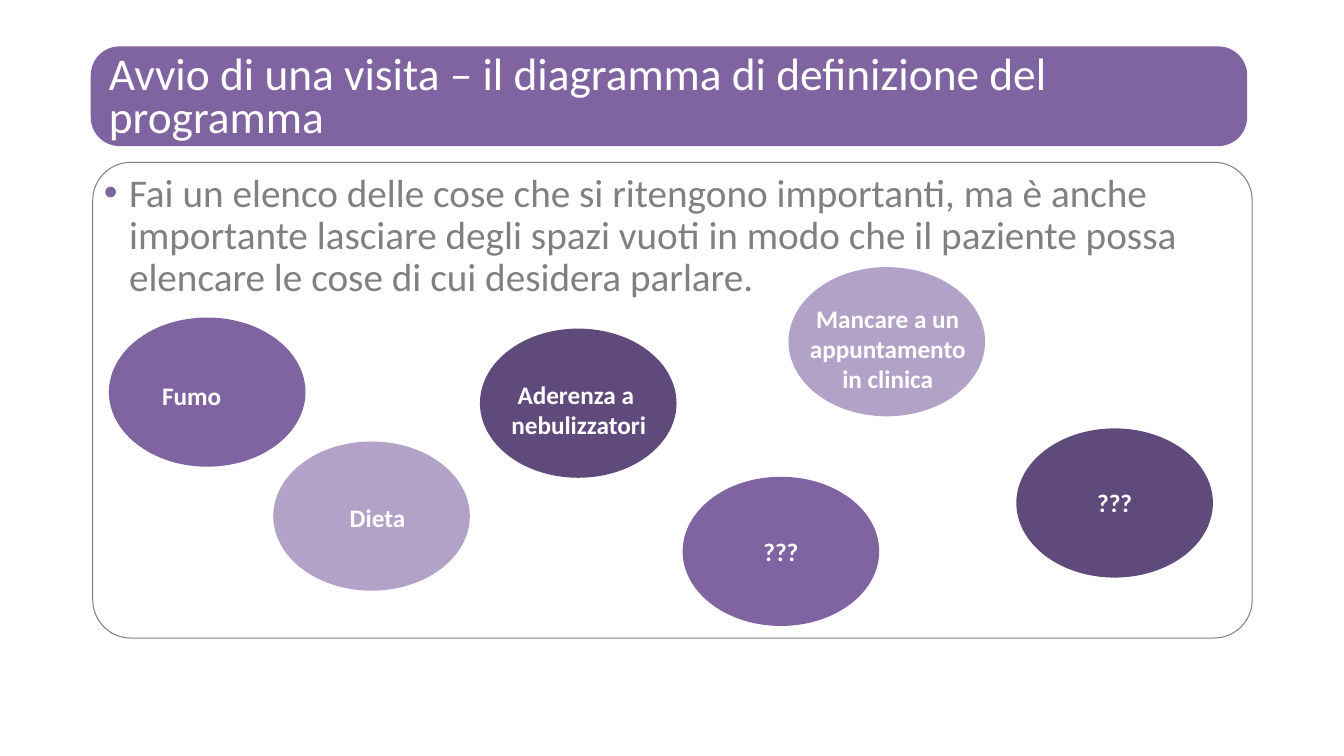
from pptx import Presentation
from pptx.util import Inches, Pt
from pptx.dml.color import RGBColor as RGB
from pptx.enum.shapes import MSO_SHAPE as Shape
from pptx.enum.text import MSO_ANCHOR as Anchor, PP_ALIGN as Align
from lxml.etree import SubElement as Sub
from pptx.oxml.ns import qn

COLORS = {"violet": "8064A2", "lilac": "B3A2C7", "plum": "604A7B",
          "gray": "808080", "white": "FFFFFF"}
TITLE = "Avvio di una visita – il diagramma di definizione del programma"
BODY = ("Fai un elenco delle cose che si ritengono importanti, ma è anche "
        "importante lasciare degli spazi vuoti in modo che il paziente possa "
        "elencare le cose di cui desidera parlare.")
OVAL = (1.95, 1.48)
TOPICS = [
    (["Dieta"], "lilac", (2.71, 4.38), (3.37, 4.93, 0.75, 0.4), Align.LEFT, False),
    (["Fumo"], "violet", (1.08, 3.15), (1.51, 3.72, 0.79, 0.4), Align.LEFT, False),
    (["Aderenza a ", "nebulizzatori"], "plum", (4.76, 3.26),
     (4.97, 3.71, 1.54, 0.7), Align.CENTER, False),
    (["Mancare a un appuntamento", "in clinica"], "lilac", (7.82, 2.65),
     (7.26, 2.96, 3.09, 1.01), Align.CENTER, True),
    (["???"], "violet", (6.77, 4.73), (7.47, 5.27, 0.55, 0.4), Align.CENTER, False),
    (["???"], "plum", (10.08, 4.25), (10.78, 4.79, 0.55, 0.4), Align.CENTER, False),
]


def color(name):
    return RGB.from_string(COLORS[name])


def add_form(kind, box, fill=None, line=None, adj=None):
    form = slide.shapes.add_shape(kind, *map(Inches, box))
    form.shadow.inherit = False
    if fill:
        form.fill.solid()
        form.fill.fore_color.rgb = color(fill)
    else:
        form.fill.background()
    if line:
        form.line.color.rgb = color(line)
        form.line.width = Pt(0.75)
    else:
        form.line.fill.background()
    if adj:
        form.adjustments[0] = adj
    return form


def add_text(frame, lines, size=18, ink="white", bold=False, align=Align.LEFT,
             anchor=Anchor.TOP, wrap=True, space=None, inset=None, bullet=None):
    frame.word_wrap = wrap
    frame.vertical_anchor = anchor
    if inset is not None:
        frame.margin_left = frame.margin_right = Inches(inset)
        frame.margin_top = frame.margin_bottom = Inches(inset)
    for i, line in enumerate(lines):
        para = frame.add_paragraph() if i else frame.paragraphs[0]
        para.alignment = align
        if space:
            para.line_spacing = space
        if bullet:
            props = para._p.get_or_add_pPr()
            props.set("marL", str(Inches(0.25)))
            props.set("indent", str(-Inches(0.25)))
            Sub(Sub(props, qn("a:buClr")), qn("a:srgbClr")).set("val", COLORS[bullet])
            Sub(props, qn("a:buFont")).set("typeface", "Arial")
            Sub(props, qn("a:buChar")).set("char", "•")
        run = para.add_run()
        run.text = line
        font = run.font
        font.name, font.size, font.bold = "Calibri", Pt(size), bold
        font.color.rgb = color(ink)


deck = Presentation()
deck.slide_width, deck.slide_height = Inches(13.33), Inches(7.5)
slide = deck.slides.add_slide(deck.slide_layouts[6])

add_form(Shape.ROUNDED_RECTANGLE, (0.9, 0.46, 11.47, 0.99), fill="violet", adj=0.29)
head = slide.shapes.add_textbox(*map(Inches, (1.08, 0.62, 11.18, 0.72)))
add_text(head.text_frame, [TITLE], size=32.4, anchor=Anchor.MIDDLE, space=0.8, inset=0)

panel = add_form(Shape.ROUNDED_RECTANGLE, (0.92, 1.61, 11.5, 4.72), line="gray", adj=0.08)
add_text(panel.text_frame, [BODY], size=28, ink="gray", space=0.9, inset=0, bullet="violet")

for lines, fill, spot, box, align, wrap in TOPICS:
    add_form(Shape.OVAL, spot + OVAL, fill=fill)
    label = slide.shapes.add_textbox(*map(Inches, box))
    add_text(label.text_frame, lines, bold=True, align=align, wrap=wrap)

deck.save("out.pptx")
